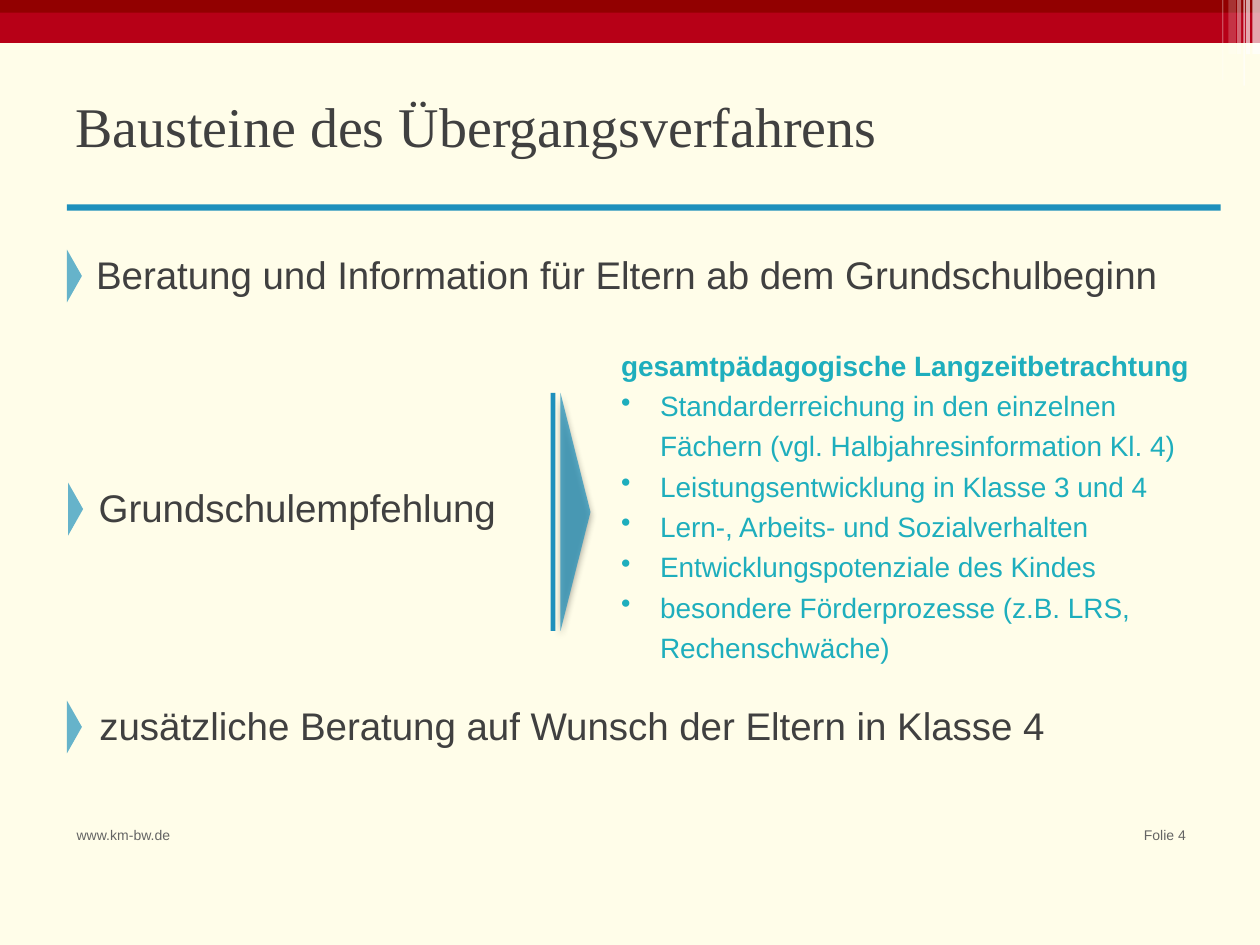
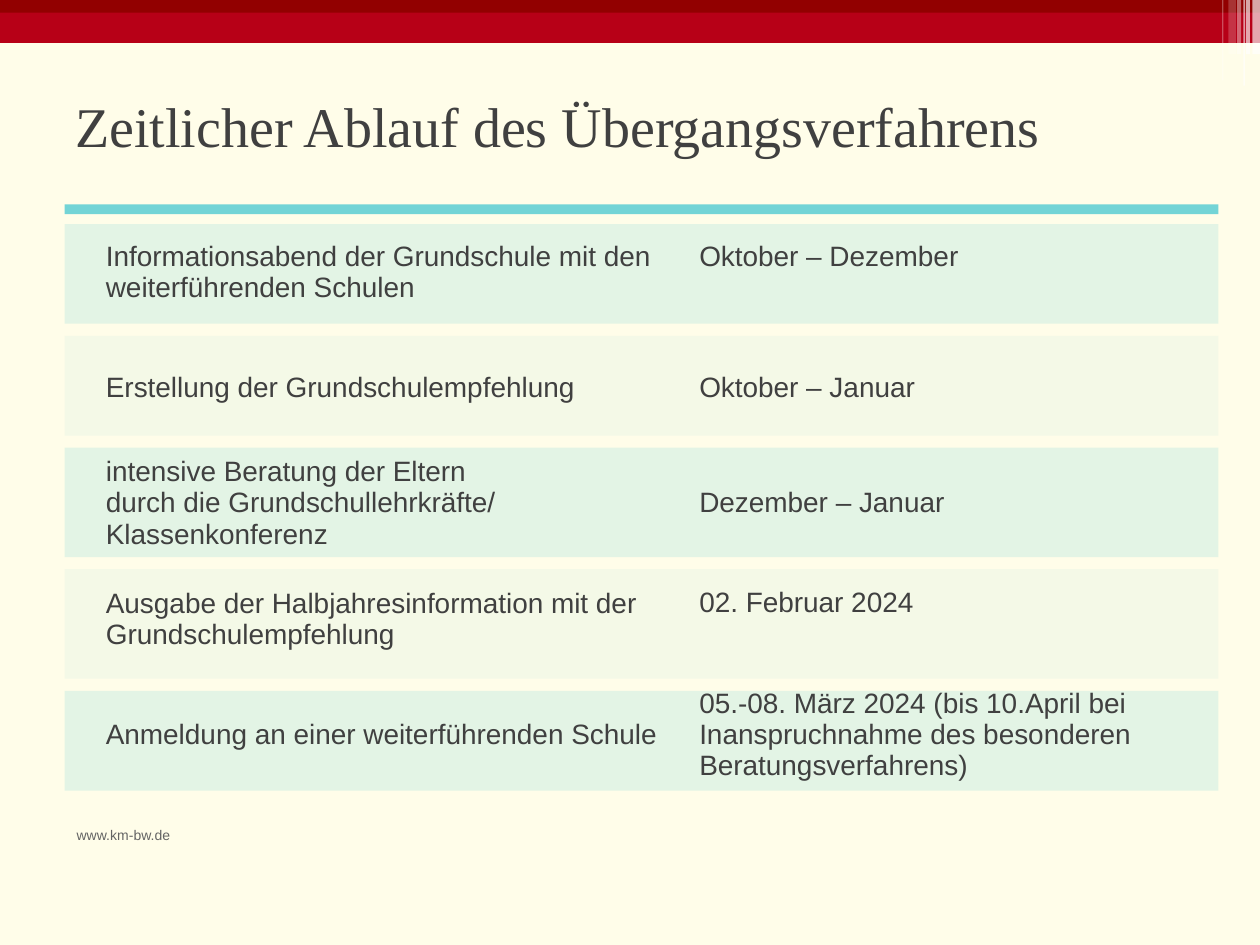
from lxml import etree
from pptx import Presentation, util as u
from pptx.dml.color import RGBColor
from pptx.enum import shapes, text
from pptx.oxml.ns import qn

INK, GREY, BLUE, AQUA, TEAL = "404040", "646464", "1E90BC", "73D4D6", "1EAEBD"
CREAM, RED, DARK_RED, WHITE = "FFFDE9", "B70017", "920000", "FFFFFF"
SANS, SERIF = "Arial", "Times New Roman"
RECT, ARROW = shapes.MSO_SHAPE.RECTANGLE, shapes.MSO_SHAPE.PENTAGON
PROCESS = shapes.MSO_SHAPE.FLOWCHART_PROCESS
MIDDLE, TOP = text.MSO_ANCHOR.MIDDLE, text.MSO_ANCHOR.TOP
LEFT, CENTER, RIGHT = text.PP_ALIGN.LEFT, text.PP_ALIGN.CENTER, text.PP_ALIGN.RIGHT
NO_TABLE_STYLE = "{2D5ABB26-0587-4C30-8999-92F81FD0307C}"
STRIPES = [(712, 2.2, 31, 65), (715.7, 4.3, 31, 65), (698.4, 0.7, 46, 30),
           (710.6, 0.8, 49, 60), (702, 4.3, 31, 20), (707, 2.2, 31, 40)]


def color(code):
    """Turn a hex string into a colour."""
    return RGBColor.from_string(code)


def points(*lengths):
    """Turn plain numbers into point lengths."""
    return [u.Pt(length) for length in lengths]


class Slides:
    """Hold the deck, its style and the current page."""

    def __init__(self):
        """Start an empty deck with the shared background."""
        self.deck = Presentation()
        self.deck.slide_width, self.deck.slide_height = points(720, 540)
        fill = self.deck.slide_master.background.fill
        fill.solid()
        fill.fore_color.rgb = color(CREAM)

    def start(self, title, rule):
        """Add a page with bands, title, rule and web address."""
        self.page = self.deck.slides.add_slide(self.deck.slide_layouts[6])
        self.shape((0, 0, 720, 24.5), RED)
        self.shape((0, 0, 720, 7.2), DARK_RED)
        for left, width, height, alpha in STRIPES:
            self.shape((left, 0, width, height), WHITE, alpha)
        self.label((36, 44, 648, 55.5), [title], 32, font=SERIF)
        self.shape(*rule)
        self.footer((36.7, 468.7, 72, 28), "www.km-bw.de")

    def shape(self, at, fill=None, alpha=100, kind=RECT):
        """Draw a borderless shape, filled if a colour is given."""
        shape = self.page.shapes.add_shape(kind, *points(*at))
        shape.shadow.inherit = False
        shape.line.fill.background()
        if kind == ARROW:
            shape.adjustments[0] = 0.994
        if fill is None:
            shape.fill.background()
            return shape
        shape.fill.solid()
        shape.fill.fore_color.rgb = color(fill)
        if alpha < 100:
            self.fade(shape.element.spPr.find(".//" + qn("a:srgbClr")), alpha)
        return shape

    def fade(self, tint, alpha):
        """Set the opacity of a colour element in percent."""
        etree.SubElement(tint, qn("a:alpha"), val=str(alpha * 1000))

    def drop_shadow(self, shape):
        """Give a shape a soft shadow straight below it."""
        effects = shape.element.spPr.find(qn("a:effectLst"))
        shadow = etree.SubElement(
            effects, qn("a:outerShdw"), blurRad=str(u.Pt(4)),
            dist=str(u.Pt(2)), dir="5400000", rotWithShape="0")
        self.fade(etree.SubElement(shadow, qn("a:srgbClr"), val="000000"), 45)

    def fill_frame(self, frame, lines, size, ink=INK, font=SANS, align=LEFT):
        """Fill a text frame with one paragraph for each line."""
        for number, line in enumerate(lines):
            para = frame.add_paragraph() if number else frame.paragraphs[0]
            para.text = line
            para.alignment = align
            para.font.name, para.font.size = font, u.Pt(size)
            para.font.color.rgb = color(ink)

    def label(self, at, lines, size, anchor=MIDDLE, **style):
        """Add a wrapping text box."""
        box = self.page.shapes.add_textbox(*points(*at))
        frame = box.text_frame
        frame.word_wrap, frame.vertical_anchor = True, anchor
        self.fill_frame(frame, lines, size, **style)
        return frame

    def footer(self, at, line, align=LEFT):
        """Add a small grey line at the foot of the page."""
        self.label(at, [line], 8, TOP, ink=GREY, align=align)

    def marker(self, left, top):
        """Draw the small arrowhead in front of a building block."""
        self.shape((left, top, 8.6, 30.2), BLUE, 68, ARROW)

    def process(self, at, line):
        """Add an unfilled process shape with one line of text."""
        frame = self.shape(at, kind=PROCESS).text_frame
        frame.word_wrap, frame.vertical_anchor = True, MIDDLE
        self.fill_frame(frame, [line], 22)

    def bullets(self, at, heading, items):
        """Add a bold heading with a bulleted list below it."""
        frame = self.label(at, [heading, *items], 16, ink=TEAL)
        for number, para in enumerate(frame.paragraphs):
            para.line_spacing = 1.2
            para.font.bold = number == 0
            if number:
                indent = u.Pt(22.3)
                props = para._p.get_or_add_pPr()
                props.set("marL", str(indent))
                props.set("indent", str(-indent))
                bullet = etree.Element(qn("a:buChar"), char="•")
                props.insert_element_before(bullet, "a:tabLst", "a:defRPr")

    def table(self, at, widths, rows):
        """Add a table without fills, raising dates flagged as such."""
        holder = self.page.shapes.add_table(len(rows), 2, *points(*at))
        table = holder.table
        table.first_row = table.horz_banding = False
        holder.element.find(".//" + qn("a:tableStyleId")).text = NO_TABLE_STYLE
        for column, width in zip(table.columns, widths):
            column.width = u.Pt(width)
        for number, (step, date, raised) in enumerate(rows):
            for side, lines in enumerate((step, [date])):
                cell = table.cell(number, side)
                cell.fill.background()
                cell.vertical_anchor = MIDDLE
                self.fill_frame(cell.text_frame, lines, 16)
            if raised:
                table.cell(number, 1).margin_bottom = u.Pt(21.5)


def building_blocks(slides):
    """Show the building blocks of the transfer procedure."""
    slides.start("Bausteine des Übergangsverfahrens",
                 ((38.2, 116.8, 659.3, 3.6), BLUE))
    slides.footer((615, 468.7, 69.8, 28), "Folie 4", RIGHT)
    slides.bullets((347.8, 190.8, 341.3, 193),
                   "gesamtpädagogische Langzeitbetrachtung", [
        "Standarderreichung in den einzelnen Fächern "
        "(vgl. Halbjahresinformation Kl. 4)",
        "Leistungsentwicklung in Klasse 3 und 4",
        "Lern-, Arbeits- und Sozialverhalten",
        "Entwicklungspotenziale des Kindes",
        "besondere Förderprozesse (z.B. LRS, Rechenschwäche)"])
    slides.process((49.7, 394.6, 630, 39.6),
                   "zusätzliche Beratung auf Wunsch der Eltern in Klasse 4")
    slides.process((47.8, 128.2, 630, 57),
                   "Beratung und Information für Eltern ab dem Grundschulbeginn")
    slides.label((44.6, 207.4, 250.6, 164.2), ["Grundschulempfehlung"], 22,
                 align=CENTER)
    slides.drop_shadow(slides.shape((320.2, 224.6, 17.2, 136), BLUE, 70, ARROW))
    slides.shape((314.6, 224.6, 2.8, 136), BLUE)
    for left, top in ((38.2, 142.6), (38.9, 275.8), (38.2, 400.3)):
        slides.marker(left, top)


def timeline(slides):
    """Show the dates of the transfer procedure."""
    slides.start("Zeitlicher Ablauf des Übergangsverfahrens",
                 ((36.9, 116.8, 659.3, 5.6), AQUA))
    top = 128
    for number, height in enumerate((57, 57, 62.6, 62.6, 57)):
        slides.shape((36.9, top, 659.3, height), AQUA, 8 if number % 2 else 20)
        top += height + 6.9
    slides.table((53.3, 122.4, 629.3, 330.5), (339.1, 290.2), [
        (["Informationsabend der Grundschule mit den weiterführenden Schulen"],
         "Oktober – Dezember", True),
        (["Erstellung der Grundschulempfehlung"], "Oktober – Januar", False),
        (["intensive Beratung der Eltern",
          "durch die Grundschullehrkräfte/ Klassenkonferenz"],
         "Dezember – Januar", False),
        (["Ausgabe der Halbjahresinformation mit der Grundschulempfehlung"],
         "02. Februar 2024", True),
        (["Anmeldung an einer weiterführenden Schule"],
         "05.-08. März 2024 (bis 10.April bei Inanspruchnahme des besonderen "
         "Beratungsverfahrens)", False)])


def main():
    """Build and save the deck."""
    slides = Slides()
    building_blocks(slides)
    timeline(slides)
    slides.deck.save("out.pptx")


if __name__ == "__main__":
    main()
